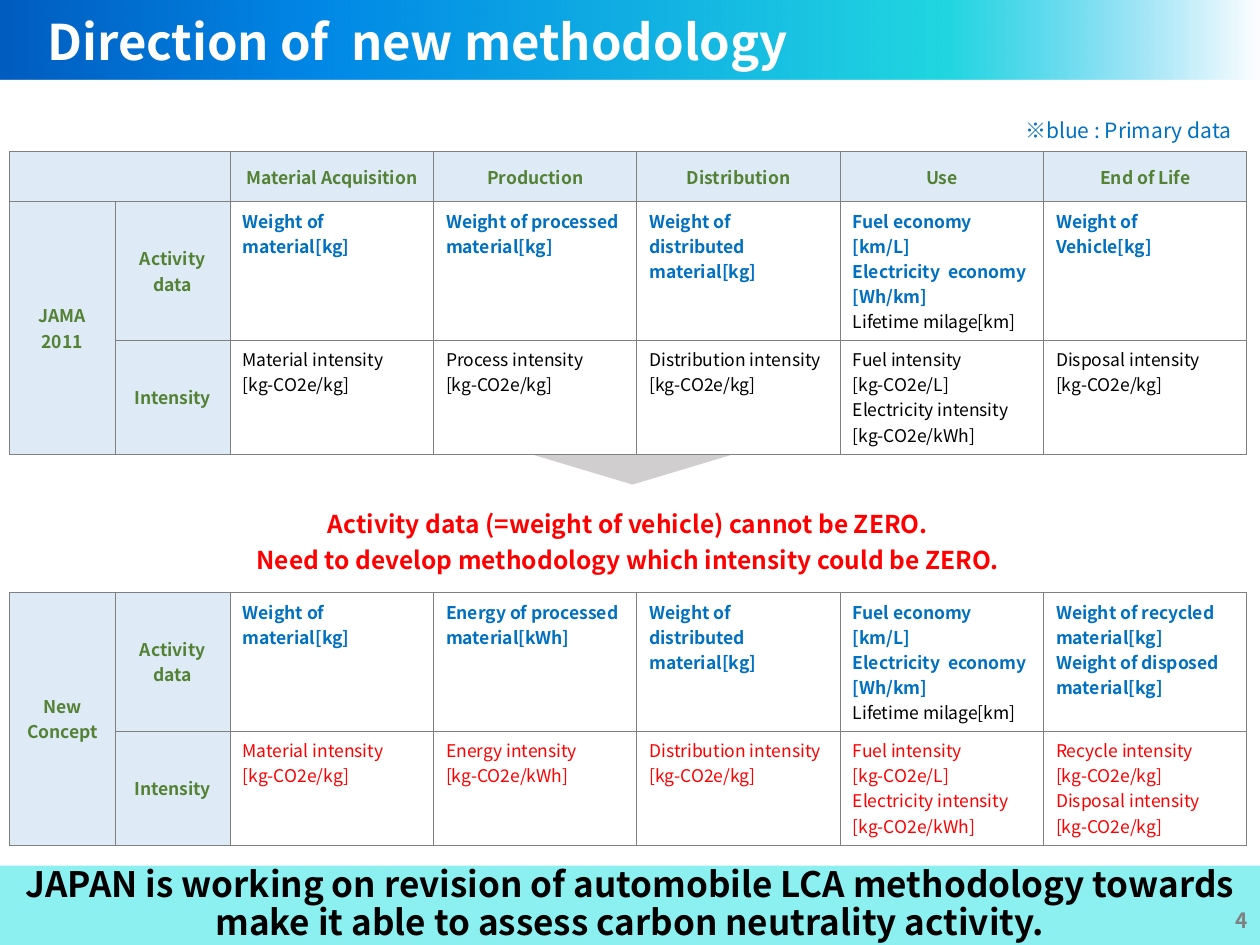
from dataclasses import dataclass
from typing import NamedTuple

from lxml.etree import SubElement
from pptx import Presentation
from pptx.dml.color import RGBColor
from pptx.enum.shapes import MSO_SHAPE as Preset
from pptx.enum.text import MSO_ANCHOR as Anchor, PP_ALIGN as Align
from pptx.oxml.ns import qn
from pptx.util import Cm, Pt

FONT = "Noto Sans CJK JP"
WHITE = RGBColor(0xFF, 0xFF, 0xFF)
BLACK = RGBColor(0, 0, 0)
RED = RGBColor(0xFF, 0, 0)
BLUE = RGBColor(0x00, 0x70, 0xC0)
GREEN = RGBColor(0x54, 0x82, 0x35)
GREY = RGBColor(0x80, 0x80, 0x80)
ARROW_GREY = RGBColor(0xD0, 0xCE, 0xCE)
PALE_BLUE = RGBColor(0xDE, 0xEB, 0xF7)
AQUA = RGBColor(0x8C, 0xF0, 0xF0)
# Position in %, colour, opacity in %
BANNER_STOPS = [
    (0, RGBColor(0x00, 0xB0, 0xF0), 0),
    (25, RGBColor(0x21, 0xD6, 0xE0), 100),
    (75, RGBColor(0x00, 0x87, 0xE6), 100),
    (100, RGBColor(0x00, 0x5C, 0xBF), 100),
]


class Style(NamedTuple):
    size: float
    color: RGBColor
    bold: bool = False


class Box(NamedTuple):
    left: float
    top: float
    width: float
    height: float

    def lengths(self) -> list:
        return [Cm(value) for value in self]


@dataclass
class Methodology:
    """One half of the table; each entry holds one line per paragraph."""
    name: str
    first_row: int
    activity: list[str]
    intensity: list[str]
    intensity_color: RGBColor


LABEL = Style(10, GREEN, True)
PRIMARY = Style(10, BLUE, True)
SECONDARY = Style(10, BLACK)
MILEAGE = "Lifetime milage[km]"
USE_ACTIVITY = f"Fuel economy\n[km/L]\nElectricity  economy\n[Wh/km]\n{MILEAGE}"
USE_INTENSITY = "Fuel intensity\n[kg-CO2e/L]\nElectricity intensity\n[kg-CO2e/kWh]"
PER_KG = "[kg-CO2e/kg]"
STAGES = ["Material Acquisition", "Production", "Distribution", "Use", "End of Life"]
FINDING = ("Activity data (=weight of vehicle) cannot be ZERO.\n"
           "Need to develop methodology which intensity could be ZERO.")
FINDING_ROW = 3
METHODOLOGIES = [
    Methodology(
        "JAMA\n2011", 1,
        ["Weight of material[kg]", "Weight of processed material[kg]",
         "Weight of distributed material[kg]", USE_ACTIVITY, "Weight of Vehicle[kg]"],
        [f"Material intensity\n{PER_KG}", f"Process intensity\n{PER_KG}",
         f"Distribution intensity\n{PER_KG}", USE_INTENSITY,
         f"Disposal intensity\n{PER_KG}"],
        BLACK),
    Methodology(
        "New\nConcept", 4,
        ["Weight of material[kg]", "Energy of processed material[kWh]",
         "Weight of distributed material[kg]", USE_ACTIVITY,
         "Weight of recycled material[kg]\nWeight of disposed material[kg]"],
        [f"Material intensity\n{PER_KG}", "Energy intensity\n[kg-CO2e/kWh]",
         f"Distribution intensity\n{PER_KG}", USE_INTENSITY,
         f"Recycle intensity\n{PER_KG}\nDisposal intensity\n{PER_KG}"],
        RED),
]
COLUMN_WIDTHS = [2.13, 2.32] + [4.1] * len(STAGES)
ROW_HEIGHTS = [0.77, 2.79, 2.3, 2.79, 2.79, 2.3]


def write(frame, text: str, style: Style, align=Align.LEFT, spacing: float = 1) -> None:
    """Write one paragraph per line, with the mileage line as secondary data."""
    for index, line in enumerate(text.split("\n")):
        paragraph = frame.add_paragraph() if index else frame.paragraphs[0]
        paragraph.alignment = align
        paragraph.line_spacing = spacing
        look = SECONDARY if line == MILEAGE else style
        run = paragraph.add_run()
        run.text = line
        run.font.name = FONT
        run.font.size = Pt(look.size)
        run.font.bold = look.bold
        run.font.color.rgb = look.color
        SubElement(run.font._element, qn("a:ea"), typeface=FONT)


def add_text(slide, box: Box, text: str, style: Style, align=Align.LEFT,
             spacing: float = 1, wrap: bool = True) -> None:
    frame = slide.shapes.add_textbox(*box.lengths()).text_frame
    frame.word_wrap = wrap
    frame.vertical_anchor = Anchor.MIDDLE
    write(frame, text, style, align, spacing)


def add_plain_shape(slide, preset, box: Box, color: RGBColor):
    shape = slide.shapes.add_shape(preset, *box.lengths())
    shape.shadow.inherit = False
    shape.line.fill.background()
    shape.fill.solid()
    shape.fill.fore_color.rgb = color
    return shape


def add_banner(slide, box: Box) -> None:
    banner = add_plain_shape(slide, Preset.RECTANGLE, box, WHITE)
    banner.fill.gradient()
    banner.fill.gradient_angle = 180
    stops = banner._element.spPr.find(".//" + qn("a:gsLst"))
    for stop in list(stops):
        stops.remove(stop)
    for position, color, opacity in BANNER_STOPS:
        stop = SubElement(stops, qn("a:gs"), pos=str(position * 1000))
        tint = SubElement(stop, qn("a:srgbClr"), val=str(color))
        if opacity < 100:
            SubElement(tint, qn("a:alpha"), val=str(opacity * 1000))


def set_borders(cell, drawn_sides: str) -> None:
    properties = cell._tc.get_or_add_tcPr()
    for side in "LRTB":
        line = SubElement(properties, qn(f"a:ln{side}"), w=str(Pt(0.5)))
        if side in drawn_sides:
            fill = SubElement(line, qn("a:solidFill"))
            SubElement(fill, qn("a:srgbClr"), val=str(GREY))
        else:
            SubElement(line, qn("a:noFill"))


def fill_cell(cell, text: str, style: Style, is_label: bool = False) -> None:
    cell.fill.solid()
    cell.fill.fore_color.rgb = PALE_BLUE if is_label else WHITE
    cell.vertical_anchor = Anchor.MIDDLE if is_label else Anchor.TOP
    if text:
        write(cell.text_frame, text, style, Align.CENTER if is_label else Align.LEFT)


def add_methodology(table, method: Methodology) -> None:
    top = method.first_row
    table.cell(top, 0).merge(table.cell(top + 1, 0))
    fill_cell(table.cell(top, 0), method.name, LABEL, True)
    parts = [("Activity\ndata", method.activity, PRIMARY),
             ("Intensity", method.intensity, Style(10, method.intensity_color))]
    for row, (label, entries, style) in enumerate(parts, top):
        fill_cell(table.cell(row, 1), label, LABEL, True)
        for column, entry in enumerate(entries, 2):
            fill_cell(table.cell(row, column), entry, style)


def add_comparison(slide) -> None:
    box = Box(0.19, 3.05, sum(COLUMN_WIDTHS), sum(ROW_HEIGHTS))
    table = slide.shapes.add_table(
        len(ROW_HEIGHTS), len(COLUMN_WIDTHS), *box.lengths()).table
    table.first_row = table.horz_banding = False
    for column, width in zip(table.columns, COLUMN_WIDTHS):
        column.width = Cm(width)
    for index, (row, height) in enumerate(zip(table.rows, ROW_HEIGHTS)):
        row.height = Cm(height)
        for cell in row.cells:
            set_borders(cell, "TB" if index == FINDING_ROW else "LRTB")

    table.cell(0, 0).merge(table.cell(0, 1))
    for column, stage in enumerate(["", "", *STAGES]):
        fill_cell(table.cell(0, column), stage, LABEL, True)
    for method in METHODOLOGIES:
        add_methodology(table, method)

    finding = table.cell(FINDING_ROW, 0)
    finding.merge(table.cell(FINDING_ROW, len(COLUMN_WIDTHS) - 1))
    finding.fill.background()
    finding.vertical_anchor = Anchor.MIDDLE
    finding.margin_top = Cm(0.84)
    write(finding.text_frame, FINDING, Style(14, RED, True), Align.CENTER)


def main() -> None:
    deck = Presentation()
    deck.slide_width, deck.slide_height = Cm(25.4), Cm(19.05)
    slide = deck.slides.add_slide(deck.slide_layouts[6])

    add_banner(slide, Box(0, 0, 25.4, 1.6))
    conclusion = add_plain_shape(slide, Preset.RECTANGLE, Box(0, 17.45, 25.4, 1.6), AQUA)
    conclusion.text_frame.word_wrap = True
    conclusion.text_frame.vertical_anchor = Anchor.MIDDLE
    write(conclusion.text_frame,
          "JAPAN is working on revision of automobile LCA methodology towards "
          "make it able to assess carbon neutrality activity.",
          Style(20, BLACK, True), Align.CENTER, 0.9)
    add_text(slide, Box(0.71, 0, 20.6, 1.8), "Direction of  new methodology",
             Style(28, WHITE, True), spacing=0.9)
    add_text(slide, Box(22.91, 18.06, 2.49, 0.99), "4", Style(12, GREY, True), Align.RIGHT)
    down_arrow = add_plain_shape(
        slide, Preset.ISOSCELES_TRIANGLE, Box(10.75, 9.17, 4, 0.6), ARROW_GREY)
    down_arrow._element.spPr.get_or_add_xfrm().set("flipV", "1")
    add_comparison(slide)
    add_text(slide, Box(20.42, 2.24, 4.98, 0.77), "※blue : Primary data",
             Style(12, BLUE), wrap=False)
    deck.save("out.pptx")


if __name__ == "__main__":
    main()
